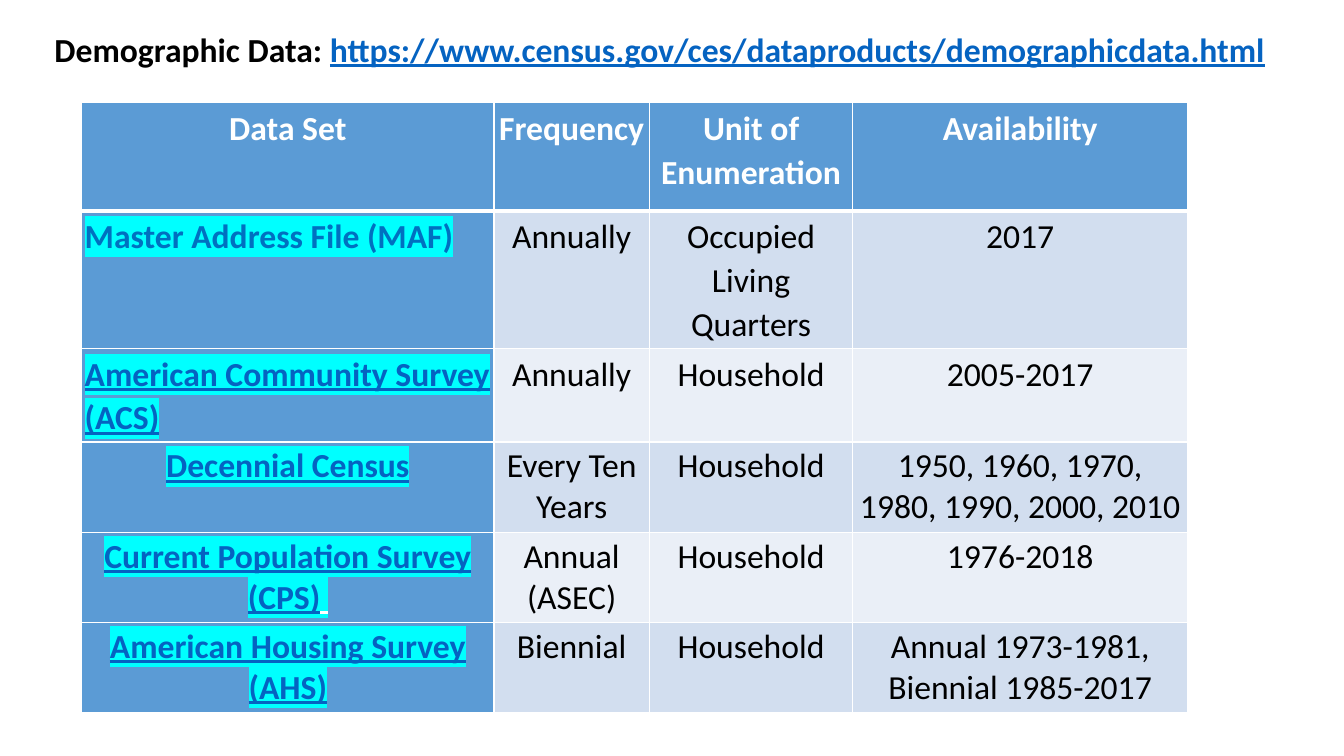
import dataclasses

import lxml.etree
import pptx
import pptx.dml.color
import pptx.enum.text
import pptx.oxml.ns
import pptx.util

Inches = pptx.util.Inches
ALIGN = pptx.enum.text.PP_ALIGN
ANCHOR = pptx.enum.text.MSO_ANCHOR


@dataclasses.dataclass(frozen=True)
class Theme:
    font: str = "Calibri"
    size: int = 24
    ink: str = "000000"
    white: str = "FFFFFF"
    link: str = "0563C1"
    plain_name: str = "0070C0"
    highlight: str = "00FFFF"
    accent: str = "5B9BD5"
    bands: tuple = ("D2DEEF", "EAEFF7")
    rule: float = 1
    header_rule: float = 3


THEME = Theme()
COLUMN_WIDTHS = (4.09, 1.54, 2.02, 3.32)
ROW_HEIGHTS = (1.07, 0.87, 0.87, 0.78, 0.81, 0.81)
LOOSE_ROWS = 3
HEADERS = ("Data Set", "Frequency", "Unit of Enumeration", "Availability")
DATA_SETS = (
    ("Master Address File (MAF)", "Annually", "Occupied Living Quarters", "2017"),
    ("American Community Survey (ACS)", "Annually", "Household", "2005-2017"),
    ("Decennial Census", "Every Ten Years", "Household",
     "1950, 1960, 1970, 1980, 1990, 2000, 2010"),
    ("Current Population Survey (CPS)", "Annual (ASEC)", "Household", "1976-2018"),
    ("American Housing Survey (AHS)", "Biennial", "Household",
     "Annual 1973-1981, Biennial 1985-2017"),
)
HEADER_LOOK = {"color": THEME.white, "bold": True}
BODY_LOOK = {"color": THEME.ink, "bold": False}
LINK_LOOK = {"color": THEME.link, "bold": True, "underline": True}
MARKED_LINK = {**LINK_LOOK, "highlight": THEME.highlight}
MARKED_NAME = {"color": THEME.plain_name, "bold": True, "highlight": THEME.highlight}


def set_format(target, values):
    for name, value in values.items():
        setattr(target, name, value)


def rgb(color):
    return pptx.dml.color.RGBColor.from_string(color)


def add_color_element(parent, tag, color):
    holder = lxml.etree.SubElement(parent, pptx.oxml.ns.qn(tag))
    lxml.etree.SubElement(holder, pptx.oxml.ns.qn("a:srgbClr"), val=color)
    return holder


def add_span(para, text, color, bold, underline=False, highlight=None):
    span = para.add_run()
    span.text = text
    set_format(span.font, {
        "name": THEME.font, "size": pptx.util.Pt(THEME.size),
        "bold": bold, "underline": underline,
    })
    span.font.color.rgb = rgb(color)
    if highlight:
        properties = span.font._element
        mark = add_color_element(properties, "a:highlight", highlight)
        properties.find(pptx.oxml.ns.qn("a:latin")).addprevious(mark)


def set_borders(cell, widths):
    properties = cell._tc.get_or_add_tcPr()
    for index, (side, width) in enumerate(widths.items()):
        line = add_color_element(properties, "a:ln" + side, THEME.white)
        line.set("w", str(pptx.util.Pt(width)))
        fill = line[0]
        solid = lxml.etree.SubElement(line, pptx.oxml.ns.qn("a:solidFill"))
        solid.append(fill)
        properties.insert(index, line)


def fill_cell(cell, row, column, text):
    loose = row < LOOSE_ROWS
    is_name = row > 0 and column == 0
    inset = Inches(0.03 if loose else 0.04)
    set_format(cell, {
        "margin_left": inset, "margin_top": inset, "margin_right": inset,
        "margin_bottom": inset, "vertical_anchor": ANCHOR.TOP,
    })
    cell.fill.solid()
    on_accent = row == 0 or column == 0
    cell.fill.fore_color.rgb = rgb(THEME.accent if on_accent else THEME.bands[(row - 1) % 2])
    set_borders(cell, {
        "L": THEME.rule, "R": THEME.rule,
        "T": THEME.header_rule if row == 1 else THEME.rule,
        "B": THEME.header_rule if row == 0 else THEME.rule,
    })
    para = cell.text_frame.paragraphs[0]
    set_format(para, {
        "alignment": ALIGN.LEFT if is_name and loose else ALIGN.CENTER,
        "line_spacing": 1.07 if loose else 1.0,
    })
    if row == 0:
        look = HEADER_LOOK
    elif is_name:
        look = MARKED_NAME if row == 1 else MARKED_LINK
    else:
        look = BODY_LOOK
    add_span(para, text, **look)
    if is_name and "CPS" in text:
        add_span(para, " ", **{**MARKED_LINK, "color": THEME.white})


def add_title(page):
    box = page.shapes.title
    set_format(box, {
        "left": Inches(0.44), "top": Inches(0),
        "width": Inches(13.14), "height": Inches(1.02),
    })
    set_format(box.text_frame, {"vertical_anchor": ANCHOR.MIDDLE, "word_wrap": True})
    para = box.text_frame.paragraphs[0]
    set_format(para, {"alignment": ALIGN.LEFT, "line_spacing": 0.9})
    add_span(para, "Demographic Data: ", THEME.ink, True)
    add_span(para, "https://www.census.gov/ces/dataproducts/demographicdata.html", **LINK_LOOK)


def add_data_table(page):
    rows = (HEADERS,) + DATA_SETS
    table = page.shapes.add_table(
        len(rows), len(HEADERS), Inches(0.81), Inches(1.02),
        Inches(sum(COLUMN_WIDTHS)), Inches(sum(ROW_HEIGHTS)),
    ).table
    for column, width in zip(table.columns, COLUMN_WIDTHS):
        column.width = Inches(width)
    for row, height in zip(table.rows, ROW_HEIGHTS):
        row.height = Inches(height)
    for row, texts in enumerate(rows):
        for column, text in enumerate(texts):
            fill_cell(table.cell(row, column), row, column, text)


def main():
    deck = pptx.Presentation()
    set_format(deck, {"slide_width": Inches(13.33), "slide_height": Inches(7.5)})
    page = deck.slides.add_slide(deck.slide_layouts[5])
    add_title(page)
    add_data_table(page)
    deck.save("out.pptx")


if __name__ == "__main__":
    main()
